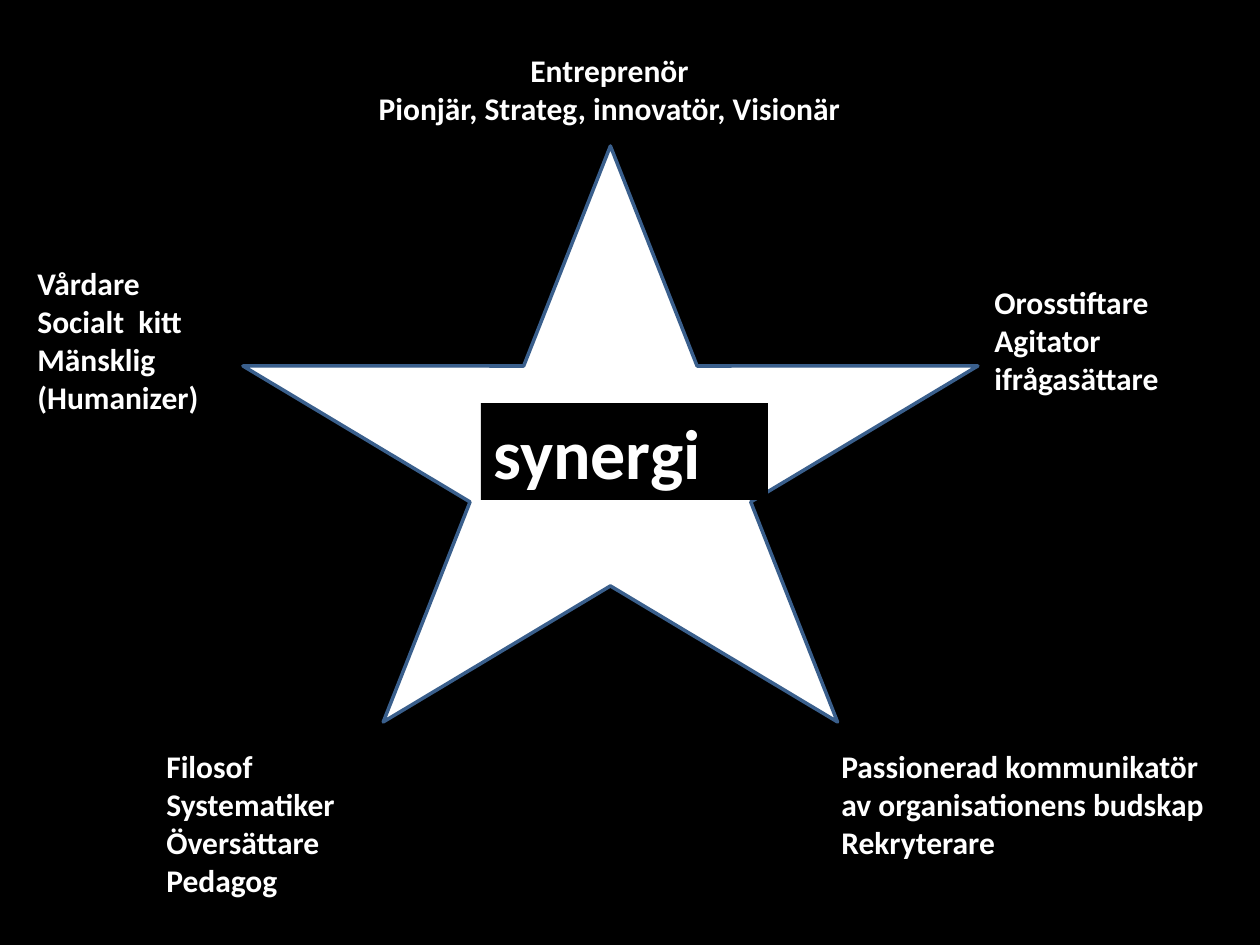
from pptx import Presentation
from pptx.dml.color import RGBColor
from pptx.enum.shapes import MSO_SHAPE
from pptx.enum.text import PP_ALIGN
from pptx.util import Emu, Pt

EMU_PER_PX = 914400 // 126
BLACK = "000000"
WHITE = "FFFFFF"
STAR_OUTLINE = "3A5F8C"

ROLES = [
    (["Entreprenör", "Pionjär, Strateg, innovatör, Visionär"],
     (297, 45, 625, 89), PP_ALIGN.CENTER),
    (["Orosstiftare", "Agitator", "ifrågasättare"],
     (982, 277, 248, 127), PP_ALIGN.LEFT),
    (["Passionerad kommunikatör", "av organisationens budskap", "Rekryterare"],
     (829, 741, 402, 127), PP_ALIGN.LEFT),
    (["Filosof", "Systematiker", "Översättare", "Pedagog"],
     (154, 741, 238, 165), PP_ALIGN.LEFT),
    (["Vårdare", "Socialt  kitt", "Mänsklig", "(Humanizer)"],
     (25, 258, 218, 242), PP_ALIGN.LEFT),
]


def px(value):
    return Emu(value * EMU_PER_PX)


def color(value):
    return RGBColor.from_string(value)


def paint(fill, value):
    fill.solid()
    fill.fore_color.rgb = color(value)


def add_star(slide, box):
    star = slide.shapes.add_shape(MSO_SHAPE.STAR_5_POINT, *map(px, box))
    star.shadow.inherit = False
    paint(star.fill, WHITE)
    star.line.color.rgb = color(STAR_OUTLINE)
    star.line.width = Pt(2)


def add_text(slide, lines, box, size=18, align=PP_ALIGN.LEFT, fill=None):
    """Add a bold white text box with one paragraph per line."""
    shape = slide.shapes.add_textbox(*map(px, box))
    if fill:
        paint(shape.fill, fill)
    frame = shape.text_frame
    frame.word_wrap = True
    frame.text = "\n".join(lines)
    for paragraph in frame.paragraphs:
        paragraph.alignment = align
        font = paragraph.runs[0].font
        font.name = "Calibri"
        font.size = Pt(size)
        font.bold = True
        font.color.rgb = color(WHITE)


def main():
    presentation = Presentation()
    presentation.slide_width = px(1260)
    presentation.slide_height = px(945)
    slide = presentation.slides.add_slide(presentation.slide_layouts[6])
    paint(slide.background.fill, BLACK)

    add_star(slide, (243, 146, 735, 576))
    add_text(slide, ["synergi"], (481, 403, 287, 97), size=40, fill=BLACK)
    for lines, box, align in ROLES:
        add_text(slide, lines, box, align=align)

    presentation.save("out.pptx")


if __name__ == "__main__":
    main()
